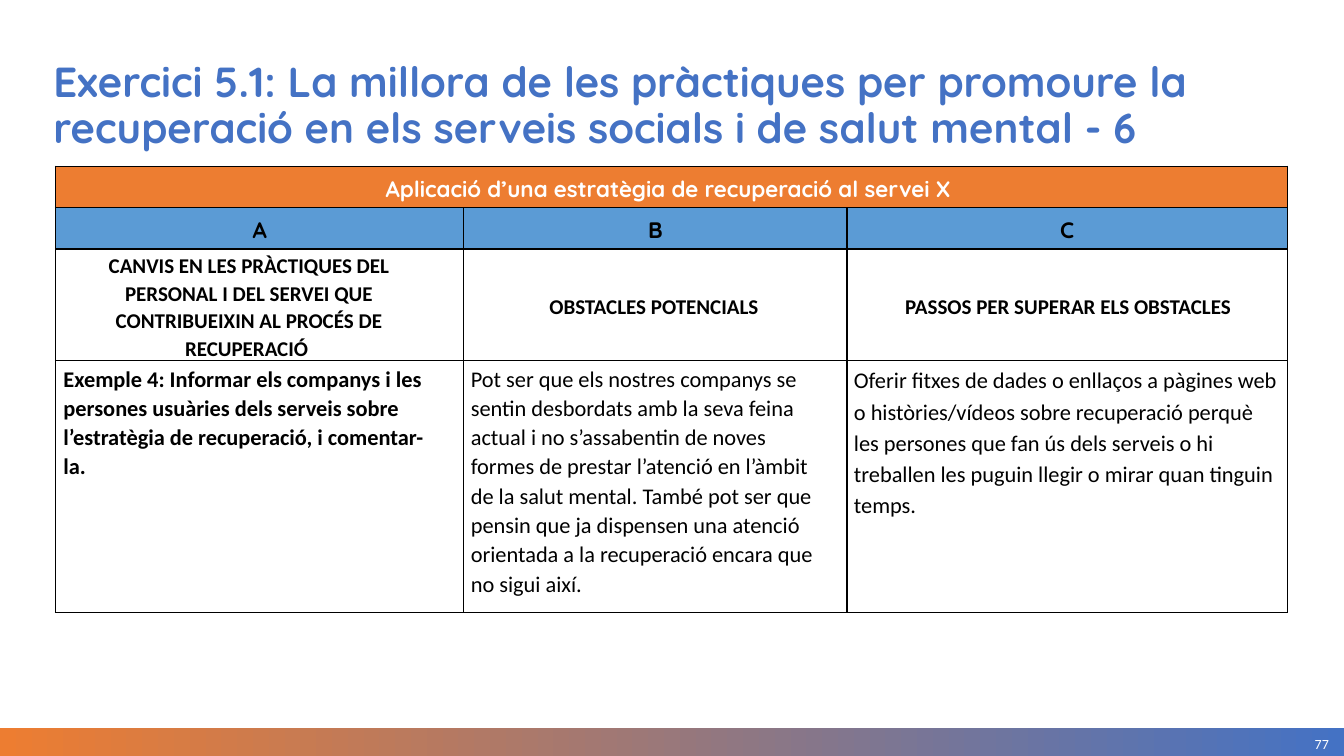
"""Builds the slide on overcoming obstacles to a recovery strategy."""
import pptx
import pptx.dml.color
import pptx.enum.shapes
import pptx.enum.text
import pptx.oxml
import pptx.oxml.ns
import pptx.util

Inches = pptx.util.Inches
Pt = pptx.util.Pt
RGBColor = pptx.dml.color.RGBColor
ALIGN = pptx.enum.text.PP_ALIGN
ANCHOR = pptx.enum.text.MSO_ANCHOR

BLUE = RGBColor(0x44, 0x72, 0xC4)
LIGHT_BLUE = RGBColor(0x5B, 0x9B, 0xD5)
ORANGE = RGBColor(0xED, 0x7D, 0x31)
WHITE = RGBColor(0xFF, 0xFF, 0xFF)
BLACK = RGBColor(0, 0, 0)

TITLE = (
    "Exercici 5.1: La millora de les pràctiques per promoure la "
    "recuperació en els serveis socials i de salut mental - 6"
)
PAGE_NUMBER = "77"
ROWS = [
    ["Aplicació d’una estratègia de recuperació al servei X "],
    ["A", "B", "C"],
    [
        "CANVIS EN LES PRÀCTIQUES DEL PERSONAL I DEL SERVEI QUE "
        "CONTRIBUEIXIN AL PROCÉS DE RECUPERACIÓ ",
        "OBSTACLES POTENCIALS ",
        "PASSOS PER SUPERAR ELS OBSTACLES",
    ],
    [
        "Exemple 4: Informar els companys i les persones usuàries dels "
        "serveis sobre l’estratègia de recuperació, i comentar-la.",
        "Pot ser que els nostres companys se sentin desbordats amb la seva "
        "feina actual i no s’assabentin de noves formes de prestar l’atenció "
        "en l’àmbit de la salut mental. També pot ser que pensin que ja "
        "dispensen una atenció orientada a la recuperació encara que no "
        "sigui així.",
        "Oferir fitxes de dades o enllaços a pàgines web o històries/vídeos "
        "sobre recuperació perquè les persones que fan ús dels serveis o hi "
        "treballen les puguin llegir o mirar quan tinguin temps.",
    ],
]
COLUMN_WIDTHS = [4.05, 3.8, 4.37]
ROW_HEIGHTS = [0.41, 0.41, 1.11, 2.5]
BAND_MARGINS = (0.09, 0, 0.09, 0)
BODY_MARGINS = (0.07, 0.03, 0.05, 0)
NO_INDENTS = [(0, 0)] * 3
ROW_STYLES = [
    dict(font="Quicksand", size=16, color=WHITE, fill=ORANGE, margins=BAND_MARGINS,
         align=ALIGN.CENTER, anchor=ANCHOR.MIDDLE, spacing=[1.15] * 3, bold=[True] * 3,
         indents=NO_INDENTS),
    dict(font="Quicksand", size=16, color=BLACK, fill=LIGHT_BLUE, margins=BAND_MARGINS,
         align=ALIGN.CENTER, anchor=ANCHOR.MIDDLE, spacing=[1.15] * 3, bold=[True] * 3,
         indents=NO_INDENTS),
    dict(font="Calibri", size=15, color=BLACK, fill=None, margins=BODY_MARGINS,
         align=ALIGN.CENTER, anchor=ANCHOR.MIDDLE, spacing=[1.07] * 3, bold=[True] * 3,
         indents=[(0.01, 0.24), (0, 0), (0, 0)]),
    dict(font="Calibri", size=16, color=BLACK, fill=None, margins=BODY_MARGINS,
         align=ALIGN.LEFT, anchor=ANCHOR.TOP, spacing=[1.07, 1.07, 1.14],
         bold=[True, False, False], indents=[(0.01, 0.24), (0, 0.17), (0, 0.04)]),
]


def style_paragraph(paragraph, font, size, color, bold, align, spacing):
    paragraph.alignment = align
    paragraph.line_spacing = spacing
    for run in paragraph.runs:
        run.font.name = font
        run.font.size = Pt(size)
        run.font.color.rgb = color
        run.font.bold = bold


def set_indents(paragraph, left, right):
    properties = paragraph._p.get_or_add_pPr()
    properties.set("marL", str(Inches(left)))
    properties.set("marR", str(Inches(right)))


def set_margins(target, margins):
    (target.margin_left, target.margin_top,
     target.margin_right, target.margin_bottom) = map(Inches, margins)


def add_borders(cell):
    properties = cell._tc.get_or_add_tcPr()
    for position, side in enumerate(("lnL", "lnR", "lnT", "lnB")):
        properties.insert(position, pptx.oxml.parse_xml(
            f'<a:{side} {pptx.oxml.ns.nsdecls("a")} w="{Pt(1)}">'
            f'<a:solidFill><a:srgbClr val="{BLACK}"/></a:solidFill></a:{side}>'
        ))


def add_footer(slide):
    bar = slide.shapes.add_shape(
        pptx.enum.shapes.MSO_SHAPE.RECTANGLE,
        0, Inches(7.22), Inches(13.33), Inches(0.28))
    bar.shadow.inherit = False
    bar.line.fill.background()
    bar.fill.gradient()
    bar.fill.gradient_angle = 0
    for stop, position, color in zip(bar.fill.gradient_stops, (0, 1), (ORANGE, BLUE)):
        stop.position = position
        stop.color.rgb = color

    number = slide.shapes.add_textbox(
        Inches(11.38), Inches(7.26), Inches(1.8), Inches(0.24))
    frame = number.text_frame
    frame.word_wrap = True
    frame.vertical_anchor = ANCHOR.MIDDLE
    set_margins(frame, (0, 0, 0, 0))
    frame.text = PAGE_NUMBER
    style_paragraph(frame.paragraphs[0], "Calibri", 10, WHITE, False, ALIGN.RIGHT, 1.0)


def add_title(slide):
    title = slide.shapes.title
    title.left, title.top = Inches(0.43), Inches(0.56)
    title.width, title.height = Inches(12.36), Inches(0.46)
    frame = title.text_frame
    frame.text = TITLE
    frame.word_wrap = True
    frame.auto_size = pptx.enum.text.MSO_AUTO_SIZE.NONE
    frame.vertical_anchor = ANCHOR.TOP
    style_paragraph(frame.paragraphs[0], "Quicksand", 30, BLUE, True, ALIGN.LEFT, 0.9)


def add_strategy_table(slide):
    table = slide.shapes.add_table(
        len(ROWS), len(COLUMN_WIDTHS), Inches(0.55), Inches(1.65),
        Inches(sum(COLUMN_WIDTHS)), Inches(sum(ROW_HEIGHTS))).table
    table.first_row = False
    table.horz_banding = False
    for column, width in zip(table.columns, COLUMN_WIDTHS):
        column.width = Inches(width)
    for row, height, texts, style in zip(table.rows, ROW_HEIGHTS, ROWS, ROW_STYLES):
        row.height = Inches(height)
        for index, cell in enumerate(row.cells):
            if style["fill"] is None:
                cell.fill.background()
            else:
                cell.fill.solid()
                cell.fill.fore_color.rgb = style["fill"]
            add_borders(cell)
            set_margins(cell, style["margins"])
            cell.vertical_anchor = style["anchor"]
            if index < len(texts):
                cell.text_frame.text = texts[index]
                paragraph = cell.text_frame.paragraphs[0]
                set_indents(paragraph, *style["indents"][index])
                style_paragraph(
                    paragraph, style["font"], style["size"], style["color"],
                    style["bold"][index], style["align"], style["spacing"][index])
    table.cell(0, 0).merge(table.cell(0, len(COLUMN_WIDTHS) - 1))


def main():
    presentation = pptx.Presentation()
    presentation.slide_width = Inches(13.33)
    presentation.slide_height = Inches(7.5)
    slide = presentation.slides.add_slide(presentation.slide_layouts[5])
    add_footer(slide)
    add_strategy_table(slide)
    add_title(slide)
    presentation.save("out.pptx")


if __name__ == "__main__":
    main()
